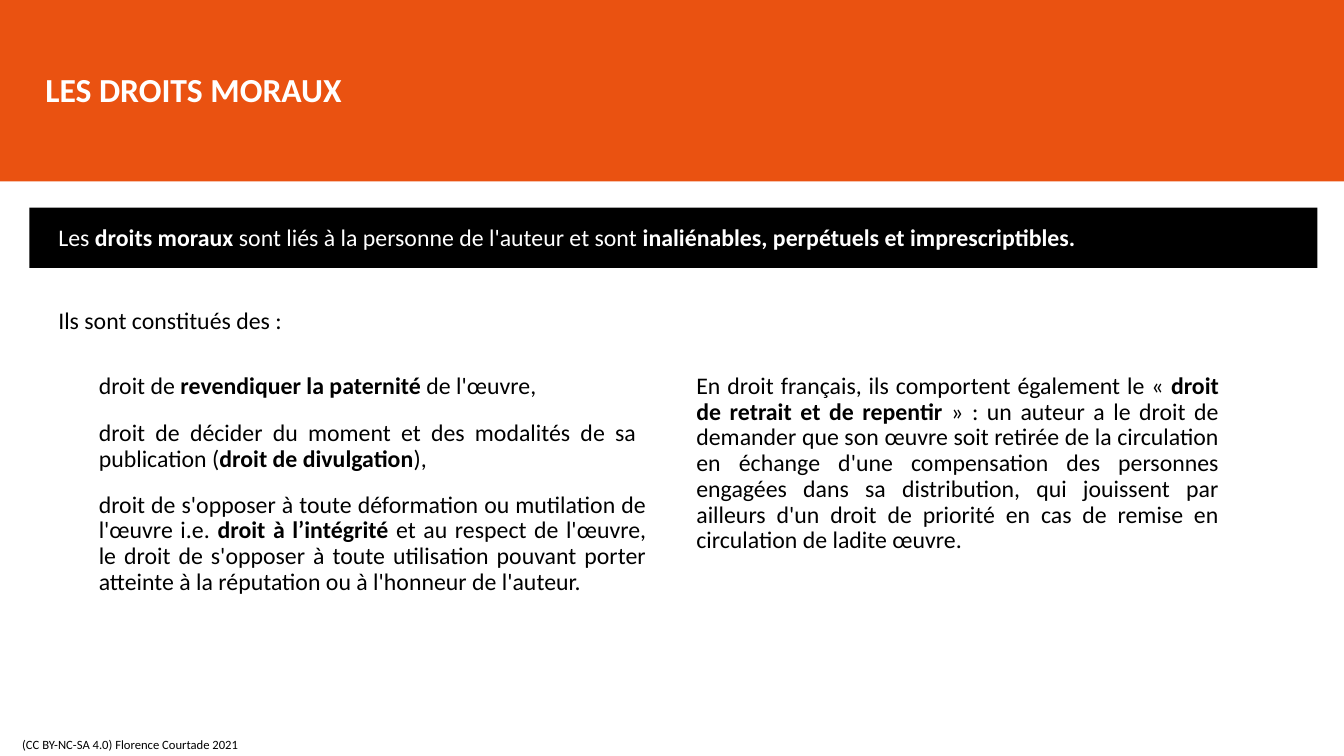
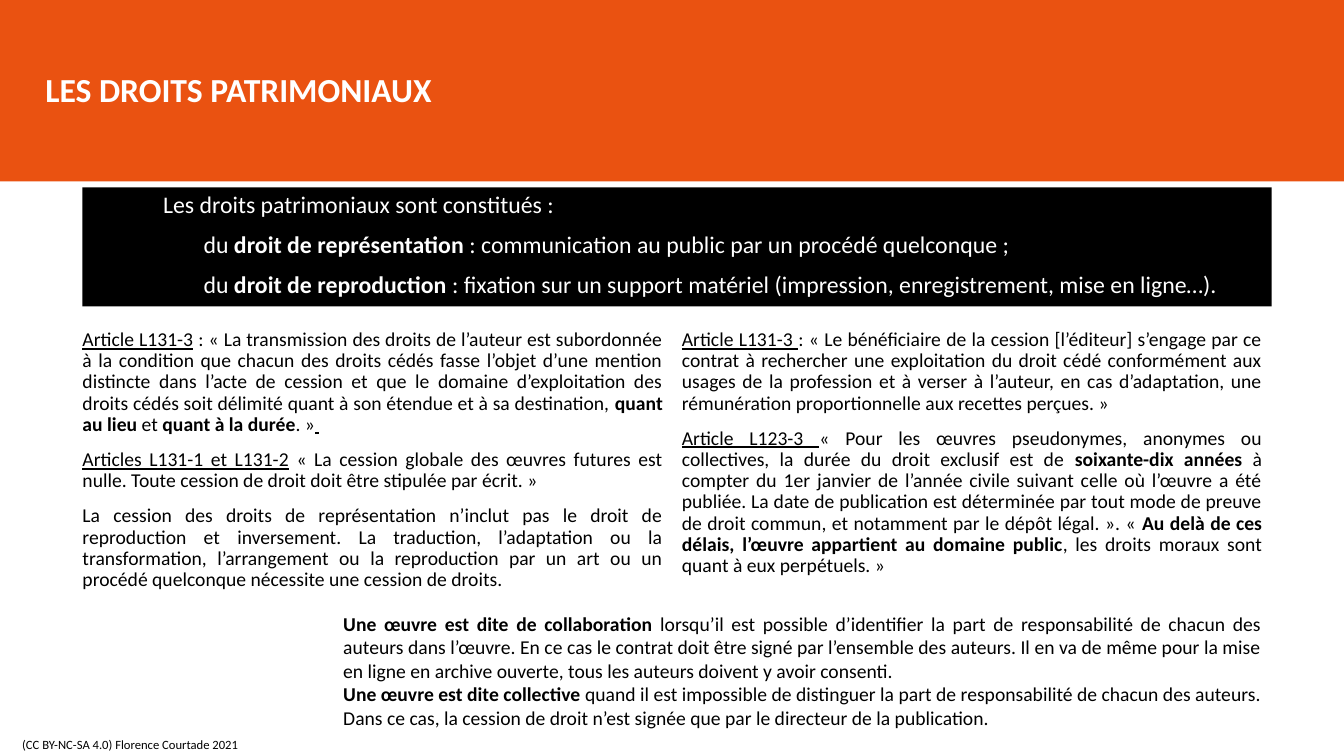
from pptx import Presentation
from pptx.dml.color import RGBColor
from pptx.enum.shapes import MSO_SHAPE as Preset
from pptx.enum.text import MSO_ANCHOR as Anchor, MSO_AUTO_SIZE as AutoSize, PP_ALIGN as Align
from pptx.util import Cm, Pt

FONT = "Calibri"
ORANGE, BLACK, WHITE = "EA5211", "000000", "FFFFFF"
FOOTER = "(CC BY-NC-SA 4.0) Florence Courtade 2021"
color_of = RGBColor.from_string


def add_rectangle(page, left, top, width, height, color):
    shape = page.shapes.add_shape(Preset.RECTANGLE, Cm(left), Cm(top), Cm(width), Cm(height))
    shape.shadow.inherit = False
    shape.fill.solid()
    shape.fill.fore_color.rgb = color_of(color)
    shape.line.fill.background()
    return shape


def add_text(page, left, top, width, height, texts, size=17, color=BLACK,
             align=Align.JUSTIFY, line_spacing=0.9, gap=10):
    """Add a text box; *stars* mark bold spans and _underscores_ underlined ones."""
    box = page.shapes.add_textbox(Cm(left), Cm(top), Cm(width), Cm(height))
    frame = box.text_frame
    frame.word_wrap = True
    for number, text in enumerate(texts):
        paragraph = frame.add_paragraph() if number else frame.paragraphs[0]
        paragraph.alignment = align
        paragraph.line_spacing = line_spacing
        paragraph.space_before = Pt(gap if number else 0)
        paragraph.font.name = FONT
        paragraph.font.size = Pt(size)
        paragraph.font.color.rgb = color_of(color)
        for bold, part in enumerate(text.split("*")):
            for underlined, words in enumerate(part.split("_")):
                if words:
                    span = paragraph.add_run()
                    span.text = words
                    if bold % 2:
                        span.font.bold = True
                    if underlined % 2:
                        span.font.underline = True
    return frame


deck = Presentation()
deck.slide_width, deck.slide_height = Cm(33.87), Cm(19.05)
layout = deck.slide_layouts.get_by_name("Title Only")
layout_title = layout.placeholders[0]
layout_title.left, layout_title.top = Cm(0.89), Cm(1.68)
layout_title.width, layout_title.height = Cm(30.66), Cm(1.27)

# Both pages: title and licence line
pages = []
for heading in ("LES DROITS MORAUX", "LES DROITS PATRIMONIAUX"):
    page = deck.slides.add_slide(layout)
    frame = page.shapes.title.text_frame
    frame.text = heading
    frame.vertical_anchor = Anchor.MIDDLE
    frame.auto_size = AutoSize.NONE
    paragraph = frame.paragraphs[0]
    paragraph.alignment = Align.LEFT
    paragraph.line_spacing = 0.9
    paragraph.font.name = FONT
    paragraph.font.size = Pt(24)
    paragraph.font.bold = True
    paragraph.font.color.rgb = color_of(WHITE)
    footer = add_text(page, 0.56, 18.49, 5.84, 0.55, [FOOTER], size=9, align=Align.LEFT)
    footer.margin_left = 0
    pages.append(page)
moral, economic = pages

# The title band belongs to the layout, behind the title
band = add_rectangle(moral, 0, 0, 33.87, 4.57, ORANGE)
band.element.nvSpPr.cNvPr.set("id", "20")
layout.shapes.element.insert(2, band.element)

# Moral rights
add_rectangle(moral, 0.74, 5.23, 32.46, 1.52, BLACK)
add_text(moral, 1.22, 5.56, 31.39, 0.97, [
    "Les *droits moraux* sont liés à la personne de l'auteur et sont "
    "*inaliénables, perpétuels et imprescriptibles.*"], color=WHITE)
add_text(moral, 1.22, 7.67, 13.64, 0.97, ["Ils sont constitués des :"])
for top, width, height, right in (
    (9.3, 13.64, 0.97, "droit de *revendiquer la paternité* de l'œuvre,"),
    (10.49, 14.05, 1.6, "droit de décider du moment et des modalités de sa "
     "publication (*droit de divulgation*),"),
    (12.29, 14.3, 3.45, "droit de s'opposer à toute déformation ou mutilation de l'œuvre "
     "i.e. *droit à l’intégrité* et au respect de l'œuvre, le droit de s'opposer à toute "
     "utilisation pouvant porter atteinte à la réputation ou à l'honneur de l'auteur."),
):
    add_text(moral, 2.24, top, width, height, [right])
add_text(moral, 17.3, 9.3, 13.67, 6.1, [
    "En droit français, ils comportent également le « *droit de retrait et de repentir* » : "
    "un auteur a le droit de demander que son œuvre soit retirée de la circulation en échange "
    "d'une compensation des personnes engagées dans sa distribution, qui jouissent par ailleurs "
    "d'un droit de priorité en cas de remise en circulation de ladite œuvre."])

# Economic rights
add_rectangle(economic, 2.08, 4.72, 29.97, 3, BLACK)
summary = add_text(economic, 3.86, 4.75, 28.19, 2.72, [
    "Les droits patrimoniaux sont constitués :",
    "du *droit de représentation* : communication au public par un procédé quelconque ;",
    "du *droit de reproduction* : fixation sur un support matériel (impression, "
    "enregistrement, mise en ligne…).",
], color=WHITE)
articles = add_text(economic, 1.35, 8.18, 30.71, 6.65, [
    "_Article L131-3_ : « La transmission des droits de l’auteur est subordonnée à la condition "
    "que chacun des droits cédés fasse l’objet d’une mention distincte dans l’acte de cession et "
    "que le domaine d’exploitation des droits cédés soit délimité quant à son étendue et à sa "
    "destination, *quant au lieu* et *quant à la durée*. »_ _",
    "_Articles L131-1 et L131-2_ « La cession globale des œuvres futures est nulle. Toute "
    "cession de droit doit être stipulée par écrit. »",
    "La cession des droits de représentation n’inclut pas le droit de reproduction et "
    "inversement. La traduction, l’adaptation ou la transformation, l’arrangement ou la "
    "reproduction par un art ou un procédé quelconque nécessite une cession de droits.",
    "_Article L131-3 _: « Le bénéficiaire de la cession [l’éditeur] s’engage par ce contrat à "
    "rechercher une exploitation du droit cédé conformément aux usages de la profession et à "
    "verser à l’auteur, en cas d’adaptation, une rémunération proportionnelle aux recettes "
    "perçues. »",
    "_Article L123-3 _« Pour les œuvres pseudonymes, anonymes ou collectives, la durée du droit "
    "exclusif est de *soixante-dix années* à compter du 1er janvier de l’année civile suivant "
    "celle où l’œuvre a été publiée. La date de publication est déterminée par tout mode de "
    "preuve de droit commun, et notamment par le dépôt légal. ». « *Au delà de ces délais, "
    "l’œuvre appartient au domaine public*, les droits moraux sont quant à eux perpétuels. »",
], size=14)
articles._txBody.bodyPr.set("numCol", "2")
authorship = add_text(economic, 7.92, 15.29, 24.13, 3.25, [
    "*Une œuvre est dite de collaboration* lorsqu’il est possible d’identifier la part de "
    "responsabilité de chacun des auteurs dans l’œuvre. En ce cas le contrat doit être signé par "
    "l’ensemble des auteurs. Il en va de même pour la mise en ligne en archive ouverte, tous les "
    "auteurs doivent y avoir consenti.",
    "*Une œuvre est dite collective* quand il est impossible de distinguer la part de "
    "responsabilité de chacun des auteurs. Dans ce cas, la cession de droit n’est signée que par "
    "le directeur de la publication.",
], size=14, line_spacing=1.0, gap=0)

for paragraphs, indent in (
    (summary.paragraphs[1:], 1.02),
    (articles.paragraphs, 0.48),
    (authorship.paragraphs, 0.48),
):
    for paragraph in paragraphs:
        paragraph._p.get_or_add_pPr().set("marL", str(Cm(indent)))

deck.save("out.pptx")
